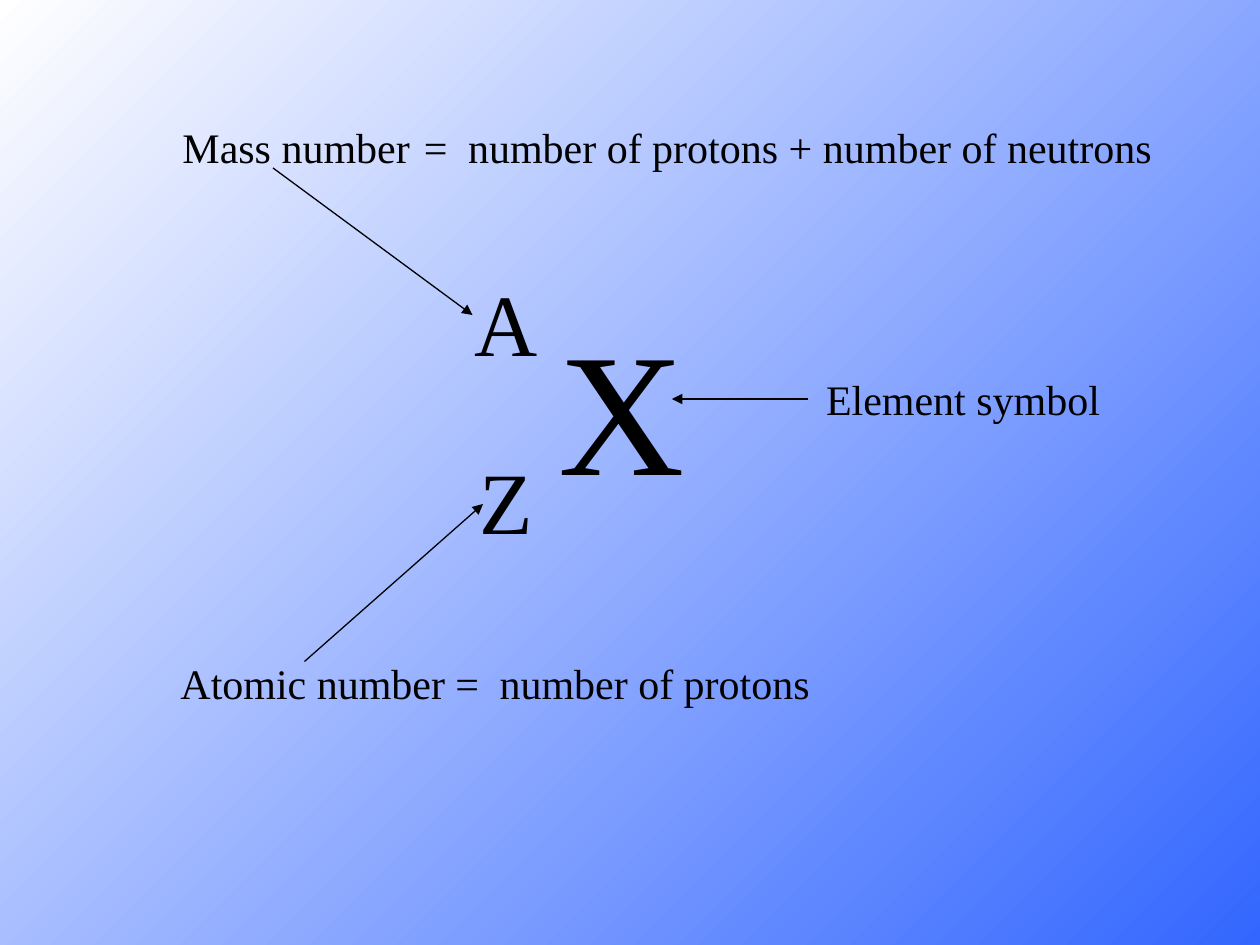
from lxml.etree import SubElement
from pptx import Presentation
from pptx.dml.color import RGBColor
from pptx.enum.shapes import MSO_CONNECTOR as CONN
from pptx.oxml.ns import qn
from pptx.util import Inches, Pt

FONT = "Times New Roman"
BLACK = "000000"


def color(c, value):
    c.rgb = RGBColor.from_string(value)


prs = Presentation()
prs.slide_width, prs.slide_height = Inches(10), Inches(7.5)
cell = prs.slide_width / 120
s = prs.slides.add_slide(prs.slide_layouts[6])

fill = s.background.fill
fill.gradient()
fill.gradient_angle = 315
for stop, value, pos in zip(fill.gradient_stops, ("FFFFFF", "3366FF"), (0, 1)):
    color(stop.color, value)
    stop.position = pos

texts = [
    ("X", 100, 52, 28, 14.4, 21.2),
    ("A", 50, 44, 25, 8.4, 11.2),
    ("Z", 50, 44.5, 42, 7.4, 11.2),
    ("Mass number", 24, 16.2, 11, 24.5, 6),
    ("Atomic number", 24, 16, 62, 28, 6),
    ("Element symbol", 24, 77.5, 35, 28.8, 6),
    ("=\tnumber of protons + number of neutrons", 24, 39.2, 11, 72.5, 6),
    ("=\tnumber of protons", 24, 42.2, 62, 37, 6),
]
for text, size, *box in texts:
    sp = s.shapes.add_textbox(*(round(n * cell) for n in box))
    tf = sp.text_frame
    tf.word_wrap = True
    p = tf.paragraphs[0]
    p.text = text
    if "\t" in text:
        tabs = SubElement(p._p.get_or_add_pPr(), qn("a:tabLst"))
        SubElement(tabs, qn("a:tab"), pos=str(Inches(0.35)), algn="l")
    p.font.name = FONT
    p.font.size = Pt(size)
    color(p.font.color, BLACK)

arrows = [(26, 16, 45, 30), (29, 63, 46, 48), (77, 38, 64, 38)]
for ends in arrows:
    cx = s.shapes.add_connector(CONN.STRAIGHT, *(round(n * cell) for n in ends))
    color(cx.line.color, BLACK)
    cx.line.width = Pt(0.75)
    SubElement(cx.line._get_or_add_ln(), qn("a:tailEnd"), type="triangle")
    SubElement(cx._element.spPr, qn("a:effectLst"))

prs.save("out.pptx")
